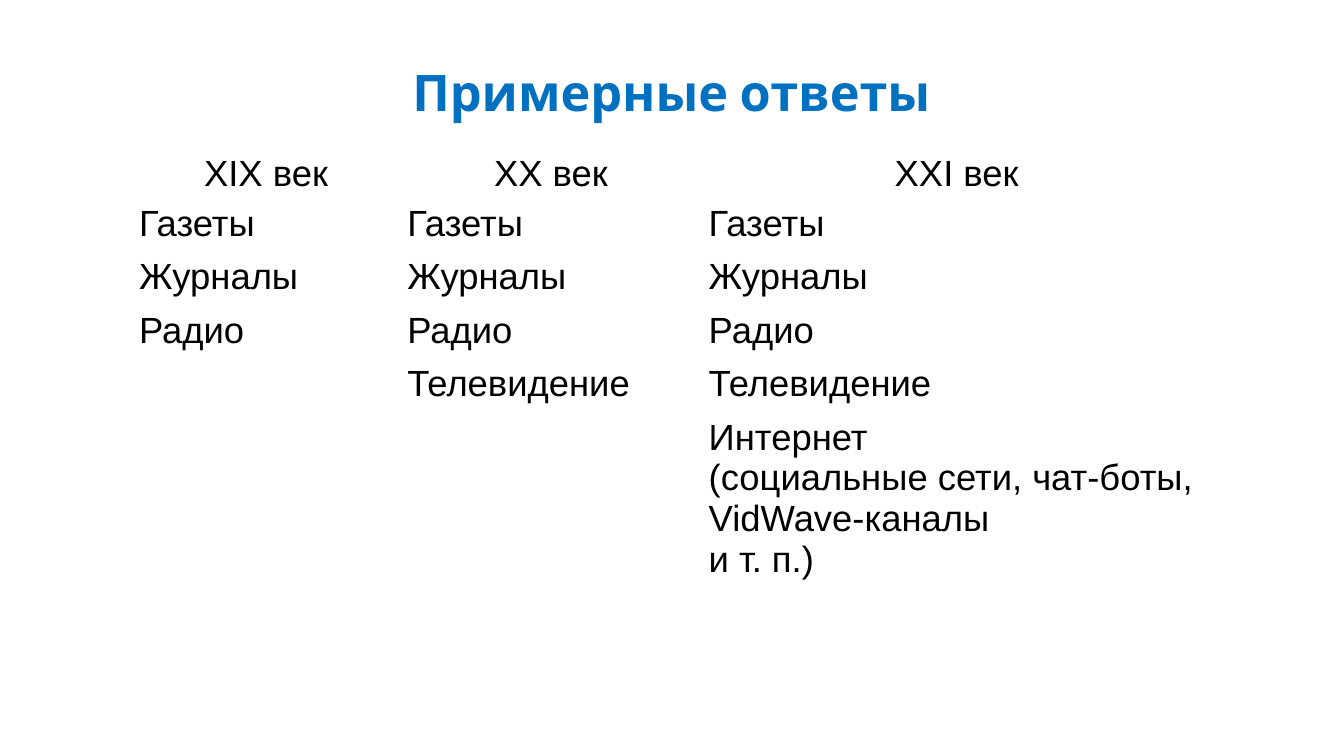
from pptx import Presentation
from pptx.dml.color import RGBColor
from pptx.enum.text import MSO_ANCHOR, PP_ALIGN
from pptx.util import Inches, Pt

BLUE = RGBColor(0x00, 0x70, 0xC0)
BLACK = RGBColor(0x00, 0x00, 0x00)

COLUMN_WIDTHS = [2.66, 2.99, 5.06]
ROW_HEIGHTS = [0.58] + [0.53] * 4 + [2.06]
CENTURIES = ["ХІХ век", "ХХ век", "ХХІ век"]
MEDIA = [
    "Газеты",
    "Журналы",
    "Радио",
    "Телевидение",
    "Интернет\n(социальные сети, чат-боты,\nVidWave-каналы\nи т. п.)",
]
MEDIA_PER_CENTURY = [3, 4, 5]


def write_text(frame, text, font="Arial", size=26, color=BLACK, bold=False,
               align=PP_ALIGN.LEFT):
    """Fill a text frame, one paragraph for each line of text."""
    for index, line in enumerate(text.split("\n")):
        para = frame.paragraphs[0] if index == 0 else frame.add_paragraph()
        para.alignment = align
        span = para.add_run()
        span.text = line
        span.font.name = font
        span.font.size = Pt(size)
        span.font.bold = bold
        span.font.color.rgb = color


class AnswerSlide:
    title_style = dict(font="Cabin", size=36, color=BLUE, bold=True,
                       align=PP_ALIGN.CENTER)
    header_style = dict(align=PP_ALIGN.CENTER)

    def __init__(self, deck):
        self.page = deck.slides.add_slide(deck.slide_layouts[6])

    def add_title(self, text, left, top, width, height):
        box = self.page.shapes.add_textbox(
            Inches(left), Inches(top), Inches(width), Inches(height))
        box.text_frame.word_wrap = True
        write_text(box.text_frame, text, **self.title_style)

    def add_grid(self, rows, left, top, widths, heights):
        """Place a plain table; the first row holds the centred headings."""
        table = self.page.shapes.add_table(
            len(rows), len(widths), Inches(left), Inches(top),
            Inches(sum(widths)), Inches(sum(heights))).table
        table.first_row = False
        table.horz_banding = False
        for column, width in zip(table.columns, widths):
            column.width = Inches(width)
        for row, height in zip(table.rows, heights):
            row.height = Inches(height)
        for row_index, texts in enumerate(rows):
            for column_index, text in enumerate(texts):
                self.fill_cell(table.cell(row_index, column_index), text,
                               is_header=row_index == 0)

    def fill_cell(self, cell, text, is_header):
        cell.fill.background()
        cell.margin_left = cell.margin_right = Inches(0.07)
        cell.margin_top = cell.margin_bottom = 0
        cell.vertical_anchor = MSO_ANCHOR.MIDDLE if is_header else MSO_ANCHOR.TOP
        if text:
            write_text(cell.text_frame, text,
                       **(self.header_style if is_header else {}))


def main():
    deck = Presentation()
    deck.slide_width = Inches(13.33)
    deck.slide_height = Inches(7.5)

    slide = AnswerSlide(deck)
    slide.add_title("Примерные ответы", 1.21, 0.56, 10.9, 0.71)
    slide.add_grid([[""]], 0.92, 2.35, [11.08], [0.2])
    media_rows = [
        [medium if index < count else "" for count in MEDIA_PER_CENTURY]
        for index, medium in enumerate(MEDIA)
    ]
    slide.add_grid([CENTURIES] + media_rows, 1.31, 1.44,
                   COLUMN_WIDTHS, ROW_HEIGHTS)

    deck.save("out.pptx")


if __name__ == "__main__":
    main()
